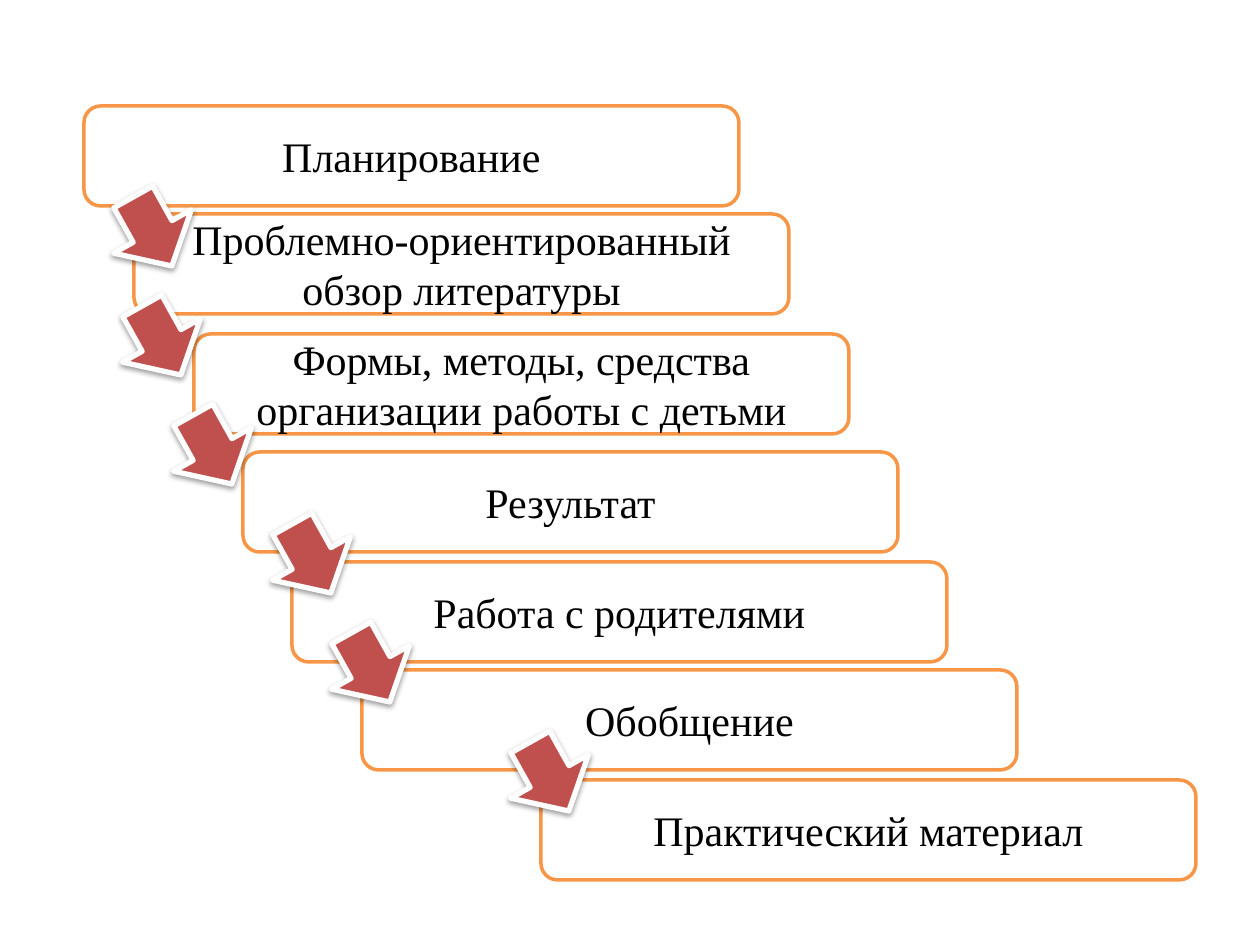
import pptx
import pptx.util
import pptx.dml.color
import pptx.enum.shapes
import pptx.enum.text
import pptx.oxml

SCALE = 914400 / 126
KINDS = pptx.enum.shapes.MSO_SHAPE

STEPS = [
    (84, 106, "Планирование"),
    (134, 214, "Проблемно-ориентированный обзор литературы"),
    (194, 334, "Формы, методы, средства организации работы с детьми"),
    (243, 452, "Результат"),
    (292, 562, "Работа с родителями"),
    (362, 670, "Обобщение"),
    (541, 780, "Практический материал"),
]
ARROWS = [113, 122, 173, 272, 331, 510]
ARROW_TOP, ARROW_GAP = 187, 109

SHADOW = (
    '<a:effectLst xmlns:a="http://schemas.openxmlformats.org/drawingml/2006/main">'
    '<a:outerShdw blurRad="40000" dist="20000" dir="5400000" rotWithShape="0">'
    '<a:srgbClr val="000000"><a:alpha val="38000"/></a:srgbClr>'
    '</a:outerShdw></a:effectLst>'
)


def px(num):
    return pptx.util.Emu(round(num * SCALE))


def color(code):
    return pptx.dml.color.RGBColor.from_string(code)


def add_shape(slide, kind, left, top, width, height, fill, line, weight):
    shape = slide.shapes.add_shape(kind, px(left), px(top), px(width), px(height))
    shape.shadow.inherit = False
    shape.fill.solid()
    shape.fill.fore_color.rgb = color(fill)
    shape.line.color.rgb = color(line)
    shape.line.width = pptx.util.Pt(weight)
    return shape


def add_step(slide, left, top, text):
    box = add_shape(slide, KINDS.ROUNDED_RECTANGLE, left, top, 655, 100,
                    "FFFFFF", "F79646", 2)
    frame = box.text_frame
    frame.word_wrap = True
    frame.vertical_anchor = pptx.enum.text.MSO_ANCHOR.MIDDLE
    frame.text = text
    para = frame.paragraphs[0]
    para.alignment = pptx.enum.text.PP_ALIGN.CENTER
    font = para.runs[0].font
    font.name = "Times New Roman"
    font.size = pptx.util.Pt(24)
    font.color.rgb = color("000000")


def add_arrow(slide, left, top):
    arrow = add_shape(slide, KINDS.RIGHT_ARROW, left, top, 79, 89,
                      "C0504D", "FFFFFF", 3)
    arrow.rotation = 60.8
    props = arrow.element.spPr
    blank = props.find(pptx.oxml.ns.qn("a:effectLst"))
    props.replace(blank, pptx.oxml.parse_xml(SHADOW))


def main():
    deck = pptx.Presentation()
    deck.slide_width, deck.slide_height = px(1260), px(945)
    slide = deck.slides.add_slide(deck.slide_layouts[6])
    for left, top, text in STEPS:
        add_step(slide, left, top, text)
    for row, left in enumerate(ARROWS):
        add_arrow(slide, left, ARROW_TOP + row * ARROW_GAP)
    deck.save("out.pptx")


if __name__ == "__main__":
    main()
